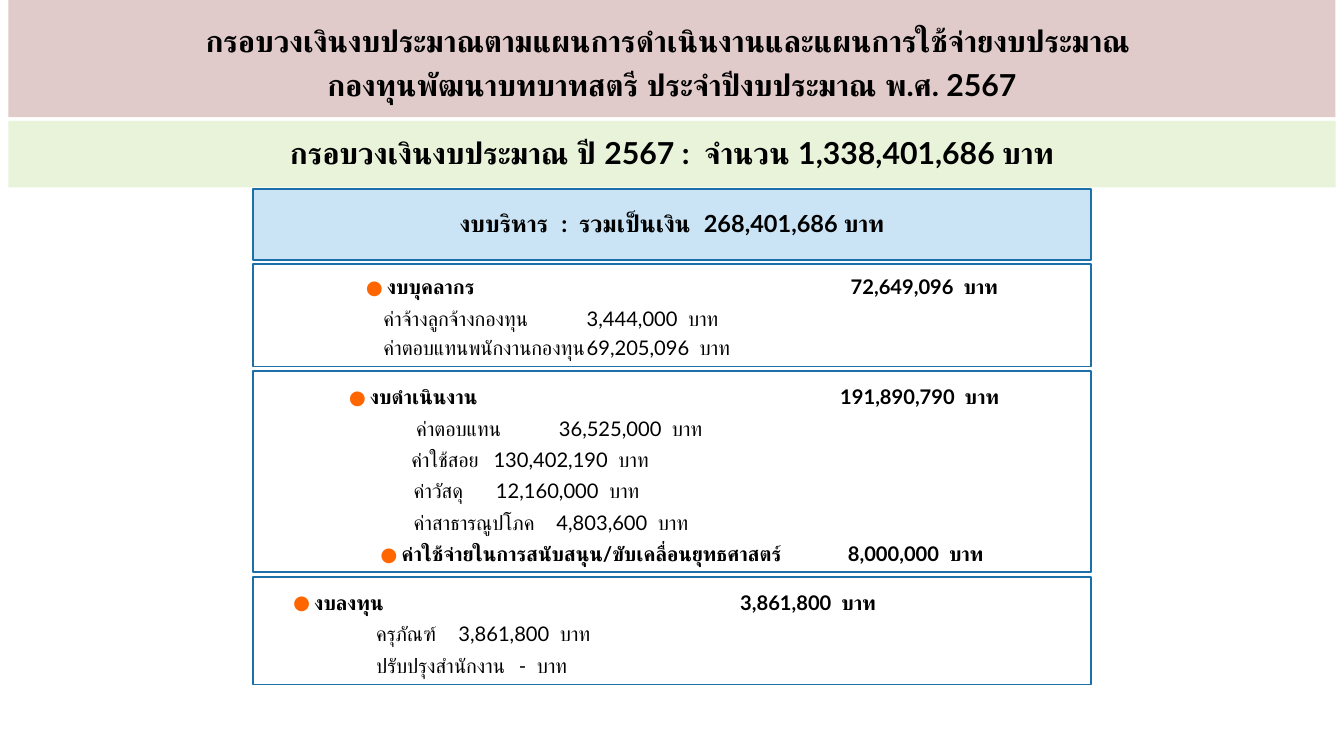
"""Build the budget framework slide of the women's role development fund."""
from typing import NamedTuple

from lxml.etree import SubElement
from pptx import Presentation
from pptx.dml.color import RGBColor
from pptx.enum.shapes import MSO_SHAPE
from pptx.enum.text import MSO_ANCHOR, PP_ALIGN
from pptx.oxml.ns import qn
from pptx.util import Inches, Pt

COLORS = {"text": "000000", "heading": "E1CACA", "total": "E8F3DA",
          "admin": "CAE4F6", "panel": "FFFFFF", "border": "1D6FA9",
          "bullet": "FF6600"}
FONT = "Lato"
PANEL_LEFT, PANEL_WIDTH = 2.09, 6.93
PANEL_INSET = 0.1
HANG = 0.18


class Row(NamedTuple):
    is_category: bool
    label_at: float
    label: str
    amount_end: float
    amount: str
    spacing: float = 1.3


PANELS = [
    (2.18, 0.85, [
        Row(True, 0.83, "งบบุคลากร", 6.06, "72,649,096", 1.2),
        Row(False, 0.98, "ค่าจ้างลูกจ้างกองทุน", 6.03, "3,444,000"),
        Row(False, 0.98, "ค่าตอบแทนพนักงานกองทุน", 6.04, "69,205,096", 1.2),
    ]),
    (3.07, 1.66, [
        Row(True, 0.69, "งบดำเนินงาน", 6.07, "191,890,790"),
        Row(False, 1.25, "ค่าตอบแทน", 5.98, "36,525,000"),
        Row(False, 1.21, "ค่าใช้สอย", 6.02, "130,402,190"),
        Row(False, 1.23, "ค่าวัสดุ", 6.0, "12,160,000"),
        Row(False, 1.23, "ค่าสาธารณูปโภค", 5.99, "4,803,600"),
        Row(True, 0.95, "ค่าใช้จ่ายในการสนับสนุน/ขับเคลื่อนยุทธศาสตร์", 5.94, "8,000,000"),
    ]),
    (4.77, 0.89, [
        Row(True, 0.23, "งบลงทุน", 5.05, "3,861,800"),
        Row(False, 0.92, "ครุภัณฑ์", 5.46, "3,861,800"),
        Row(False, 0.92, "ปรับปรุงสำนักงาน", 5.9, "-"),
    ]),
]


def rgb(key):
    return RGBColor.from_string(COLORS[key])


def style_paragraph(paragraph, size, bold, spacing, align):
    paragraph.alignment = align
    paragraph.line_spacing = spacing
    paragraph.font.name = FONT
    paragraph.font.size = Pt(size)
    paragraph.font.bold = bold
    paragraph.font.color.rgb = rgb("text")


def write_centered(banner, lines, size, spacing):
    frame = banner.text_frame
    frame.word_wrap = True
    frame.vertical_anchor = MSO_ANCHOR.MIDDLE
    frame.text = "\n".join(lines)
    for paragraph in frame.paragraphs:
        style_paragraph(paragraph, size, True, spacing, PP_ALIGN.CENTER)


def add_block(slide, left, top, width, height, fill, bordered=True):
    block = slide.shapes.add_shape(MSO_SHAPE.RECTANGLE, Inches(left), Inches(top),
                                   Inches(width), Inches(height))
    block.shadow.inherit = False
    block.fill.solid()
    block.fill.fore_color.rgb = rgb(fill)
    if bordered:
        block.line.color.rgb = rgb("border")
        block.line.width = Pt(1)
    else:
        block.line.fill.background()
    return block


def set_row_layout(paragraph, is_category, label_at, amount_end):
    """Set the indent, the bullet of a category and the tab of the amount."""
    properties = paragraph._p.get_or_add_pPr()
    properties.set("marL", str(Inches(label_at + HANG)))
    properties.set("indent", str(-Inches(HANG)))
    if is_category:
        color = SubElement(properties, qn("a:buClr"))
        SubElement(color, qn("a:srgbClr"), val=COLORS["bullet"])
        SubElement(properties, qn("a:buSzPct"), val="150000")
        SubElement(properties, qn("a:buFont"), typeface=FONT)
        SubElement(properties, qn("a:buChar"), char="●")
    else:
        SubElement(properties, qn("a:buNone"))
    tabs = SubElement(properties, qn("a:tabLst"))
    SubElement(tabs, qn("a:tab"), pos=str(Inches(amount_end)), algn="r")


def add_panel(slide, top, height, rows):
    panel = add_block(slide, PANEL_LEFT, top, PANEL_WIDTH, height, "panel")
    frame = panel.text_frame
    frame.word_wrap = True
    frame.vertical_anchor = MSO_ANCHOR.TOP
    start = min(row.label_at for row in rows)
    frame.margin_left = Inches(PANEL_INSET + start)
    frame.margin_right = 0
    for index, row in enumerate(rows):
        paragraph = frame.add_paragraph() if index else frame.paragraphs[0]
        set_row_layout(paragraph, row.is_category, row.label_at - start,
                       row.amount_end - start)
        paragraph.add_run().text = f"{row.label}\t{row.amount}  บาท"
        style_paragraph(paragraph, 12, row.is_category, row.spacing, PP_ALIGN.LEFT)


def set_title(slide):
    total = slide.shapes.title
    total.left, total.top = Inches(0.07), Inches(1)
    total.width, total.height = Inches(10.97), Inches(0.55)
    total.fill.solid()
    total.fill.fore_color.rgb = rgb("total")
    write_centered(total, ["กรอบวงเงินงบประมาณ ปี 2567 :  จำนวน 1,338,401,686 บาท"], 18, 0.9)


def main():
    deck = Presentation()
    deck.slide_width, deck.slide_height = Inches(11.11), Inches(6.25)
    slide = deck.slides.add_slide(deck.slide_layouts[5])
    set_title(slide)
    heading = add_block(slide, 0.07, 0, 10.97, 0.97, "heading", bordered=False)
    write_centered(heading, ["กรอบวงเงินงบประมาณตามแผนการดำเนินงานและแผนการใช้จ่ายงบประมาณ ",
                             "กองทุนพัฒนาบทบาทสตรี ประจำปีงบประมาณ พ.ศ. 2567"], 18, 1.2)
    admin = add_block(slide, PANEL_LEFT, 1.56, PANEL_WIDTH, 0.59, "admin")
    write_centered(admin, ["งบบริหาร  :  รวมเป็นเงิน  268,401,686 บาท"], 14, 0.9)
    for top, height, rows in PANELS:
        add_panel(slide, top, height, rows)
    deck.save("out.pptx")


if __name__ == "__main__":
    main()
